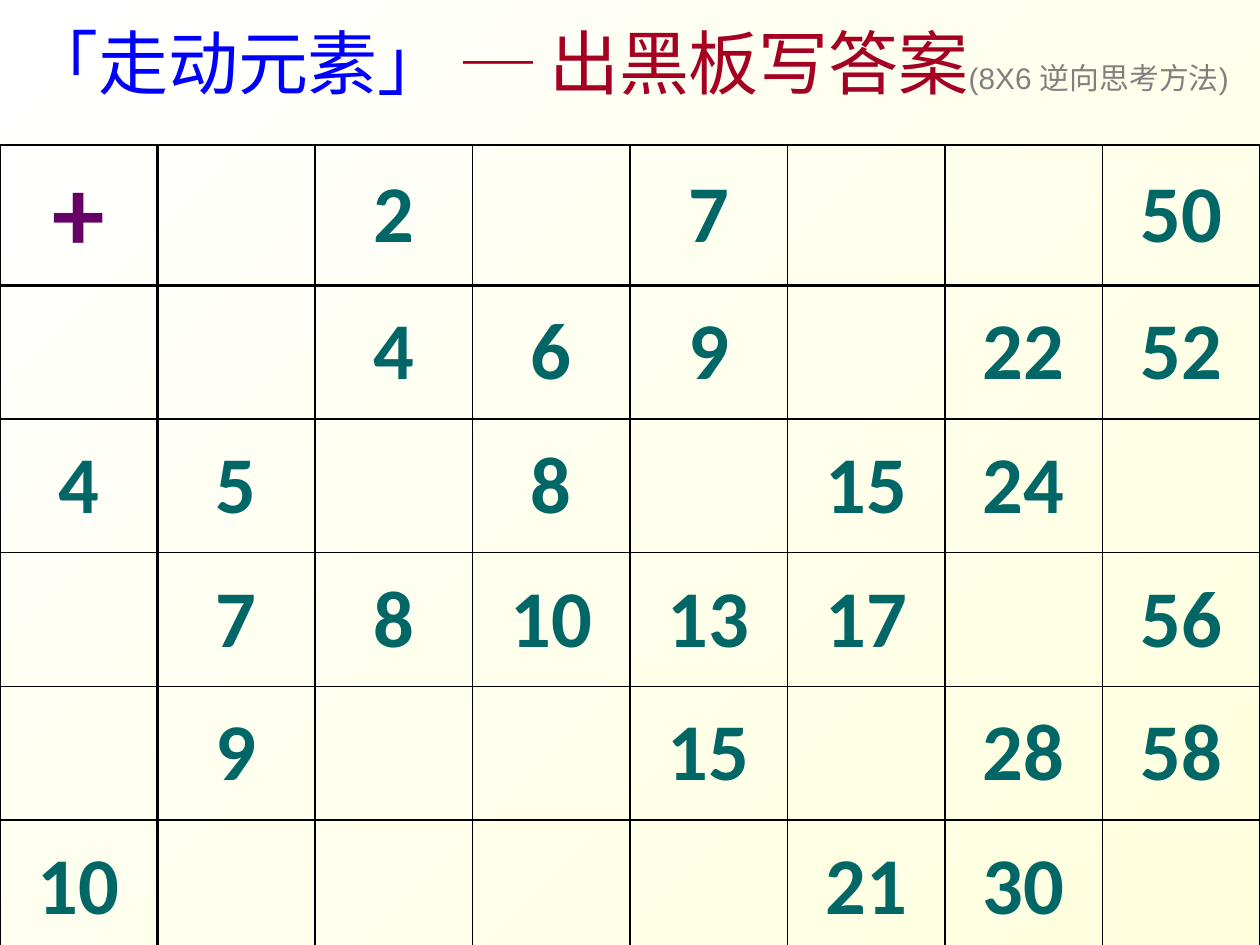
from dataclasses import dataclass

from lxml.etree import SubElement
from pptx import Presentation
from pptx.dml.color import RGBColor
from pptx.enum.text import MSO_ANCHOR as Anchor, MSO_AUTO_SIZE as AutoSize, PP_ALIGN as Align
from pptx.oxml.ns import qn
from pptx.util import Emu, Pt

EMU_PER_PX = 9144
PAGE_WIDTH, PAGE_HEIGHT = 1000, 750
TABLE_TOP, COLUMN_WIDTH, ROW_HEIGHT = 115, 125, 106
THIN, THICK = 1, 2
NUMBER_COLOR, PLUS_COLOR = "006666", "660066"
SUMS = [
    ["+", "", "2", "", "7", "", "", "50"],
    ["", "", "4", "6", "9", "", "22", "52"],
    ["4", "5", "", "8", "", "15", "24", ""],
    ["", "7", "8", "10", "13", "17", "", "56"],
    ["", "9", "", "", "15", "", "28", "58"],
    ["10", "", "", "", "", "21", "30", ""],
]


@dataclass
class Phrase:
    """A stretch of the title in one colour and size."""
    text: str
    color: str
    size: int = 40


TITLE = [
    Phrase(" ", "A50021"),
    Phrase("「走动元素」 ", "0000FF"),
    Phrase("─ 出黑板写答案", "A50021"),
    Phrase("(8X6 逆向思考方法)", "808080", 17),
]


def px(length: int) -> Emu:
    """Turn px into EMU."""
    return Emu(length * EMU_PER_PX)


def rgb(color: str) -> RGBColor:
    """Turn a hex string into a colour."""
    return RGBColor.from_string(color)


def add_text(para, text: str, *, size: int, font: str, color: str, bold: bool = False) -> None:
    """Append a formatted run to a paragraph."""
    span = para.add_run()
    span.text = text
    span.font.size = Pt(size)
    span.font.name = font
    span.font.bold = bold
    span.font.color.rgb = rgb(color)


def paint_background(page) -> None:
    """Fill the page with a diagonal gradient from white to pale yellow."""
    fill = page.background.fill
    fill.gradient()
    fill.gradient_angle = 315
    for stop, color, position in zip(fill.gradient_stops, ("FFFFFF", "FFFFDD"), (0, 1)):
        stop.color.rgb = rgb(color)
        stop.position = position


def write_title(page, phrases: list[Phrase]) -> None:
    """Place and format the title."""
    box = page.shapes.title
    box.left, box.top, box.width, box.height = px(0), px(5), px(PAGE_WIDTH), px(87)
    frame = box.text_frame
    frame.word_wrap = True
    frame.auto_size = AutoSize.NONE
    frame.vertical_anchor = Anchor.MIDDLE
    para = frame.paragraphs[0]
    para.alignment = Align.LEFT
    for phrase in phrases:
        add_text(para, phrase.text, size=phrase.size, font="Arial", color=phrase.color)


def draw_borders(cell, row: int, column: int) -> None:
    """Rule the cell, thick along the header row and header column."""
    widths = {
        "a:lnL": THICK if column == 1 else THIN,
        "a:lnR": THICK if column == 0 else THIN,
        "a:lnT": THICK if row == 1 else THIN,
        "a:lnB": THICK if row == 0 else THIN,
    }
    properties = cell._tc.get_or_add_tcPr()
    for tag, width in widths.items():
        line = SubElement(properties, qn(tag), w=str(Pt(width)))
        SubElement(SubElement(line, qn("a:solidFill")), qn("a:srgbClr"), val="000000")


def write_cell(cell, text: str) -> None:
    """Write a number, or the larger plus sign, in the middle of a cell."""
    cell.vertical_anchor = Anchor.MIDDLE
    para = cell.text_frame.paragraphs[0]
    para.alignment = Align.CENTER
    is_plus = text == "+"
    add_text(para, text, size=60 if is_plus else 46, font="Calibri",
             color=PLUS_COLOR if is_plus else NUMBER_COLOR, bold=True)


def add_sum_table(page, sums: list[list[str]]) -> None:
    """Add the addition table with its gaps to fill in."""
    table = page.shapes.add_table(
        len(sums), len(sums[0]), px(0), px(TABLE_TOP),
        px(PAGE_WIDTH), px(ROW_HEIGHT * len(sums))).table
    table.first_row = table.horz_banding = False
    for column in table.columns:
        column.width = px(COLUMN_WIDTH)
    for row_index, texts in enumerate(sums):
        table.rows[row_index].height = px(ROW_HEIGHT)
        for column_index, text in enumerate(texts):
            cell = table.cell(row_index, column_index)
            draw_borders(cell, row_index, column_index)
            cell.fill.background()
            if text:
                write_cell(cell, text)


def main() -> None:
    """Build the deck and save it."""
    deck = Presentation()
    deck.slide_width, deck.slide_height = px(PAGE_WIDTH), px(PAGE_HEIGHT)
    page = deck.slides.add_slide(deck.slide_layouts[5])
    paint_background(page)
    write_title(page, TITLE)
    add_sum_table(page, SUMS)
    deck.save("out.pptx")


if __name__ == "__main__":
    main()
